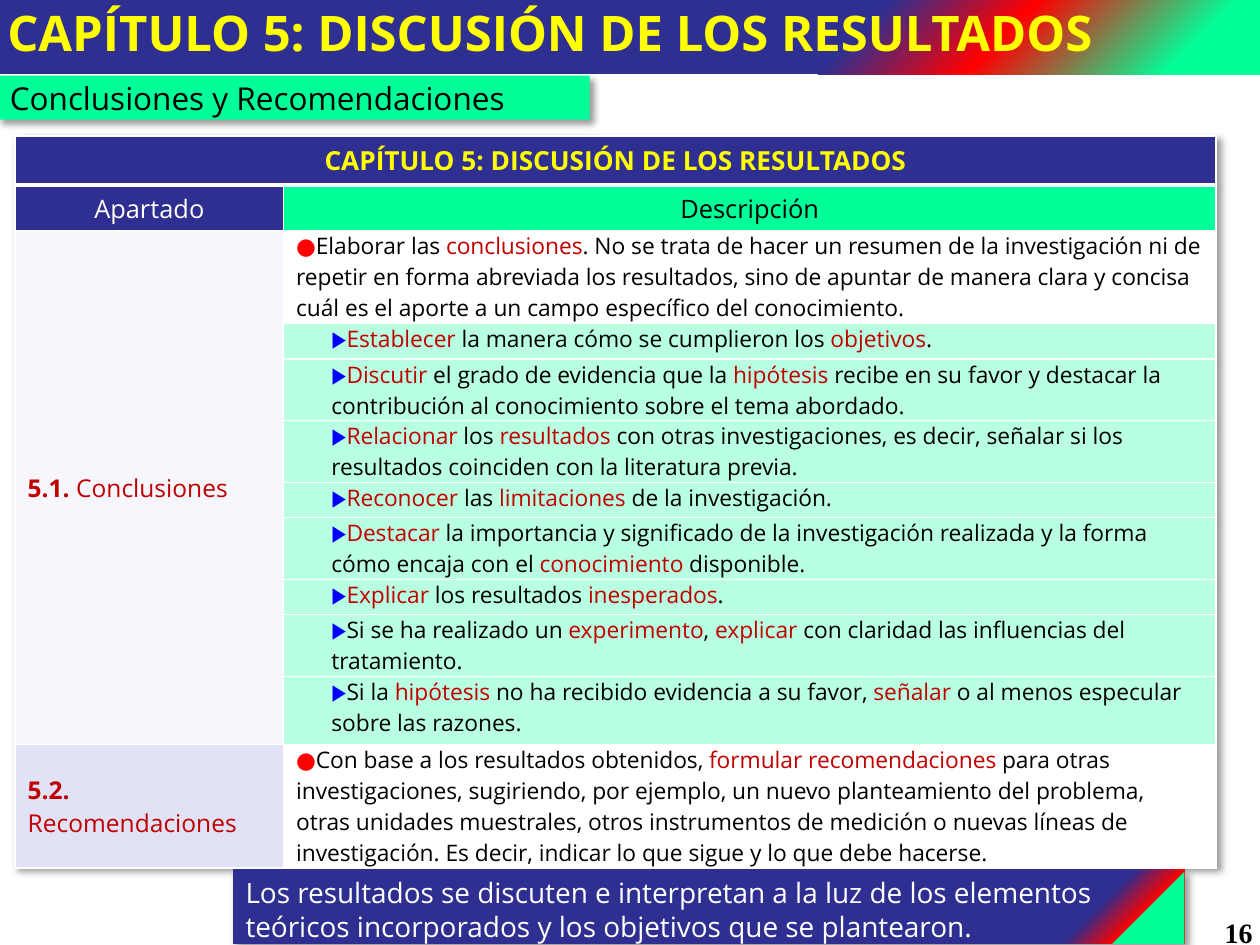
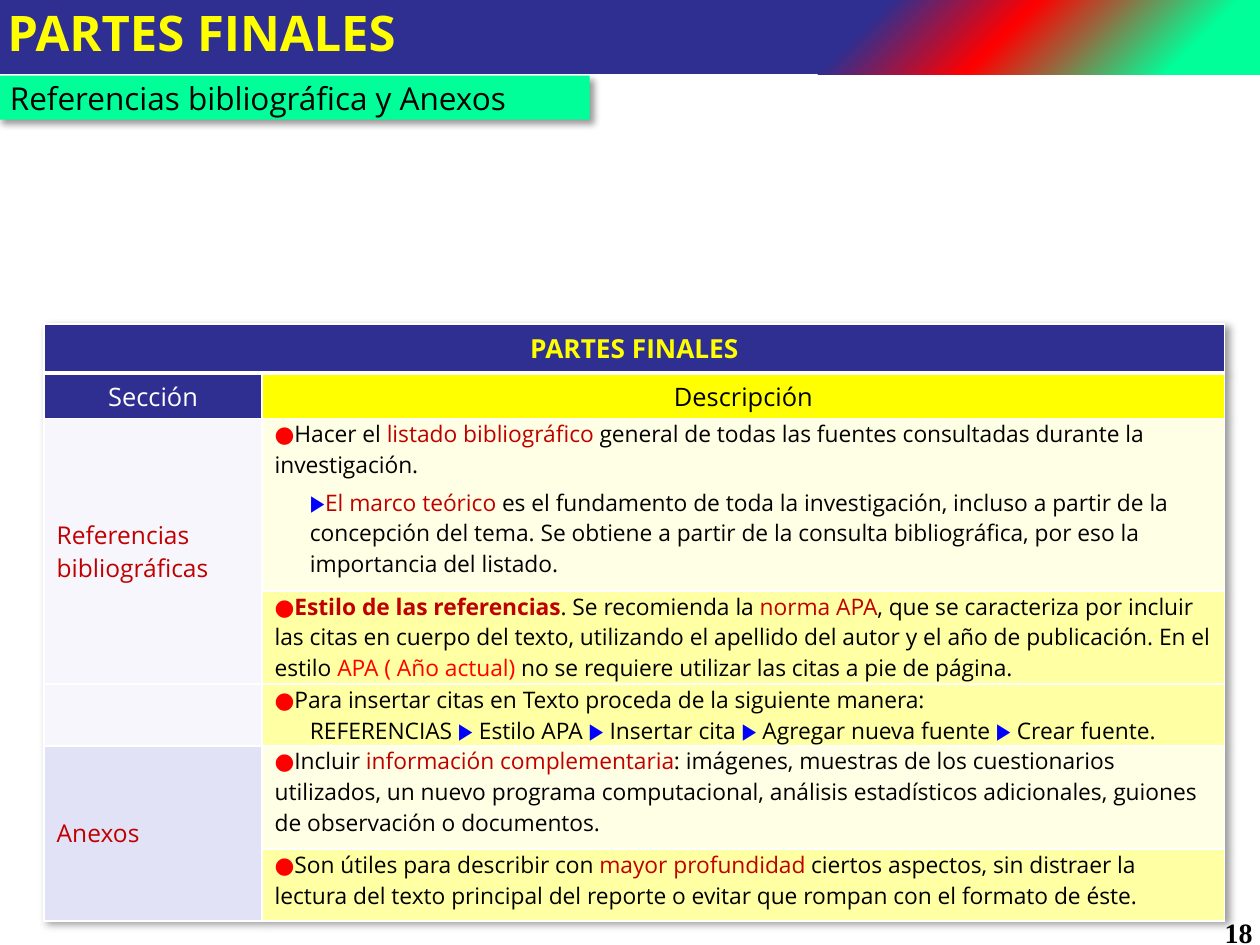
"""Build two thesis-guide slides, each with a banner, a subtitle tab and a section table."""
from lxml import etree
from pptx import Presentation
from pptx import util as u
from pptx.dml.color import RGBColor
from pptx.enum import shapes, text
from pptx.oxml import parse_xml

NS = "http://schemas.openxmlformats.org/drawingml/2006/main"
COLORS = {
    "navy": "2F2F91", "mint": "00FF99", "pale_mint": "B9FFE1", "yellow": "FFFF00",
    "cream": "FFFFE5", "lemon": "FFFFA3", "mist": "F6F6FC", "lilac": "E2E2F6",
    "accent": "C00000", "red": "FF0000", "blue": "0000FF", "white": "FFFFFF", "black": "000000",
}
BULLETS = {"●": "red", "▶": "blue"}
SHADOW = (f'<a:effectLst xmlns:a="{NS}"><a:outerShdw blurRad="50800" dist="38100" dir="2700000" '
          'algn="tl" rotWithShape="0"><a:srgbClr val="000000"><a:alpha val="40000"/></a:srgbClr>'
          '</a:outerShdw></a:effectLst>')


def split_marks(line):
    """Yield (words, color, bold) from text where |...| is accented, |*...| bold, |^...| red."""
    for order, part in enumerate(line.split("|")):
        accented = order % 2 == 1
        bold, red = accented and part.startswith("*"), accented and part.startswith("^")
        color = "red" if red else "accent" if accented else "black"
        words = part[1:] if bold or red else part
        while words:
            if words[0] in BULLETS:
                yield words[0], BULLETS[words[0]], False
                words = words[1:]
                continue
            end = min([words.find(mark) for mark in BULLETS if mark in words] or [len(words)])
            yield words[:end], color, bold
            words = words[end:]


def add_text(para, words, size=13, color="black", bold=False, font="Open Sans"):
    """Append one formatted run to a paragraph."""
    span = para.add_run()
    span.text = words
    span.font.size, span.font.bold, span.font.name = u.Pt(size), bold, font
    span.font.color.rgb = RGBColor.from_string(COLORS[color])


class Deck:
    """Presentation style and the page being drawn."""

    def __init__(self):
        """Start an empty 10 by 7.5 inch deck."""
        self.deck = Presentation()
        self.deck.slide_width, self.deck.slide_height = u.Inches(10), u.Inches(7.5)
        self.page = None

    def new_page(self, title, subtitle, number):
        """Add a page with its shared banner, subtitle tab and number."""
        self.page = self.deck.slides.add_slide(self.deck.slide_layouts[6])
        self.box((-0.04, -0.03, 10.04, 0.62), title, stops=(7, 22, 33),
                 size=28, color="yellow", bold=True)
        self.number(number)
        self.box((-0.02, 0.6, 4.7, 0.35), subtitle, fill="mint", shadow=True,
                 anchor=text.MSO_ANCHOR.MIDDLE, size=18)

    def number(self, number):
        """Write the page number in the lower right corner."""
        box = self.page.shapes.add_textbox(*map(u.Inches, (7.71, 7.22, 2.33, 0.28)))
        box.text_frame.word_wrap = True
        para = box.text_frame.paragraphs[0]
        para.alignment = text.PP_ALIGN.RIGHT
        add_text(para, str(number), size=16, bold=True, font="Times New Roman")

    def box(self, at, words, fill=None, stops=None, shadow=False,
            anchor=text.MSO_ANCHOR.TOP, **style):
        """Draw a rectangle with a solid fill or a corner gradient."""
        box = self.page.shapes.add_shape(shapes.MSO_SHAPE.RECTANGLE, *map(u.Inches, at))
        box.shadow.inherit = False
        box.line.fill.background()
        if stops:
            self.corner_gradient(box, stops)
        else:
            box.fill.solid()
            box.fill.fore_color.rgb = RGBColor.from_string(COLORS[fill])
        if shadow:
            properties = box._element.spPr
            properties.replace(properties.find(f"{{{NS}}}effectLst"), parse_xml(SHADOW))
        frame = box.text_frame
        frame.word_wrap, frame.vertical_anchor = True, anchor
        frame.paragraphs[0].alignment = text.PP_ALIGN.LEFT
        add_text(frame.paragraphs[0], words, **style)

    def corner_gradient(self, box, stops):
        """Fill a box from mint through red to navy, starting at its lower right corner."""
        marks = "".join(f'<a:gs pos="{stop * 1000}"><a:srgbClr val="{COLORS[name]}"/></a:gs>'
                        for stop, name in zip(stops, ("mint", "red", "navy")))
        gradient = parse_xml(
            f'<a:gradFill xmlns:a="{NS}" rotWithShape="1"><a:gsLst>{marks}</a:gsLst>'
            '<a:path path="circle"><a:fillToRect l="100000" t="100000"/></a:path>'
            '<a:tileRect r="-100000" b="-100000"/></a:gradFill>')
        box._element.spPr.find(f"{{{NS}}}prstGeom").addnext(gradient)

    def table(self, left, top, widths, title, headers, header_fill, sections):
        """Draw a titled table whose sections each span their own rows."""
        rows = [row for _, _, section in sections for row in section]
        heights = [0.39, 0.36] + [row[0] for row in rows]
        size = (sum(widths), sum(heights))
        frame = self.page.shapes.add_table(len(heights), 2, *map(u.Inches, (left, top, *size)))
        table = frame.table
        table.first_row = table.horz_banding = False
        table._tbl.tblPr.insert(0, parse_xml(SHADOW))
        for column, width in zip(table.columns, widths):
            column.width = u.Inches(width)
        for row, height in zip(table.rows, heights):
            row.height = u.Inches(height)

        table.cell(0, 0).merge(table.cell(0, 1))
        for column in range(2):
            self.cell(table.cell(0, column), "navy", bottom=3)
        self.heading(table.cell(0, 0), title, 15, "yellow", True)
        for column, (fill, color) in enumerate((("navy", "white"), (header_fill, "black"))):
            self.cell(table.cell(1, column), fill)
            self.heading(table.cell(1, column), headers[column], 14.5, color)

        first = 2
        for label, label_fill, section in sections:
            for index, (_, fill, words) in enumerate(section, first):
                self.cell(table.cell(index, 0), label_fill)
                self.cell(table.cell(index, 1), fill)
                self.body(table.cell(index, 1), words)
            if len(section) > 1:
                table.cell(first, 0).merge(table.cell(first + len(section) - 1, 0))
            for words, color, bold in split_marks(label):
                add_text(table.cell(first, 0).text_frame.paragraphs[0], words, 14, color, bold)
            first += len(section)

    def cell(self, cell, fill, bottom=1):
        """Fill a cell, centre it vertically and give it white borders."""
        cell.vertical_anchor = text.MSO_ANCHOR.MIDDLE
        cell.fill.solid()
        cell.fill.fore_color.rgb = RGBColor.from_string(COLORS[fill])
        properties = cell._tc.get_or_add_tcPr()
        for order, (side, width) in enumerate(zip("LRTB", (1, 1, 1, bottom))):
            line = etree.Element(f"{{{NS}}}ln{side}", w=str(u.Pt(width)))
            solid = etree.SubElement(line, f"{{{NS}}}solidFill")
            etree.SubElement(solid, f"{{{NS}}}srgbClr", val=COLORS["white"])
            properties.insert(order, line)

    def heading(self, cell, words, size, color, bold=False):
        """Write a centred heading in a cell."""
        para = cell.text_frame.paragraphs[0]
        para.alignment = text.PP_ALIGN.CENTER
        add_text(para, words, size, color, bold)

    def body(self, cell, words):
        """Write description lines; a leading > indents a line."""
        cell.vertical_anchor = text.MSO_ANCHOR.TOP
        cell.margin_top = cell.margin_bottom = 0
        for index, line in enumerate(words.split("\n")):
            frame = cell.text_frame
            para = frame.add_paragraph() if index else frame.paragraphs[0]
            if line.startswith(">"):
                line = line[1:]
                para._p.get_or_add_pPr().set("marL", str(u.Inches(0.28)))
            if index and line.startswith("▶"):
                para.space_before = u.Pt(4)
            for part, color, bold in split_marks(line):
                add_text(para, part, color=color, bold=bold)


CONCLUSION_STEPS = [
    (0.28, "|Establecer| la manera cómo se cumplieron los |objetivos|."),
    (0.49, "|Discutir |el grado de evidencia que la |hipótesis |recibe en su favor y destacar la "
           "contribución al conocimiento sobre el tema abordado."),
    (0.49, "|Relacionar| los |resultados| con otras investigaciones, es decir, señalar si los "
           "resultados coinciden con la literatura previa."),
    (0.28, "|Reconocer| las |limitaciones |de la investigación."),
    (0.49, "|Destacar| la importancia y significado de la investigación realizada y la forma "
           "cómo encaja con el |conocimiento |disponible."),
    (0.28, "|Explicar| los resultados |inesperados|."),
    (0.49, "Si se ha realizado un |experimento|, |explicar |con claridad las influencias del "
           "tratamiento."),
    (0.54, "Si la |hipótesis |no ha recibido evidencia a su favor, |señalar| o al menos "
           "especular sobre las razones."),
]
CHAPTER_SECTIONS = [
    ("|*5.1. ||Conclusiones|", "mist", [
        (0.74, "white", "●Elaborar las |conclusiones|. No se trata de hacer un resumen de la "
         "investigación ni de repetir en forma abreviada los resultados, sino de apuntar de "
         "manera clara y concisa cuál es el aporte a un campo específico del conocimiento."),
        *[(height, "pale_mint", ">▶" + step) for height, step in CONCLUSION_STEPS]]),
    ("|*5.2. ||Recomendaciones|", "lilac", [
        (0.98, "white", "●Con base a los resultados obtenidos, |formular recomendaciones |para "
         "otras investigaciones, sugiriendo, por ejemplo, un nuevo planteamiento del problema, "
         "otras unidades muestrales, otros instrumentos de medición o nuevas líneas de "
         "investigación. Es decir, indicar lo que sigue y lo que debe hacerse.")]),
]
FINAL_SECTIONS = [
    ("|Referencias bibliográficas|", "mist", [
        (1.37, "cream", "●Hacer el |listado bibliográfico |general de todas las fuentes "
         "consultadas durante la investigación.\n>▶|El marco teórico |es el fundamento de toda "
         "la investigación, incluso a partir de la concepción del tema. Se obtiene a partir de "
         "la consulta bibliográfica, por eso la importancia del listado."),
        (0.74, "lemon", "●|*Estilo de las referencias|. Se recomienda la |norma APA|, que se "
         "caracteriza por incluir las citas en cuerpo del texto, utilizando el apellido del "
         "autor y el año de publicación. En el estilo |^APA ( Año actual) |no se requiere "
         "utilizar las citas a pie de página.")]),
    ("", "mist", [
        (0.49, "lemon", "●Para insertar citas en Texto proceda de la siguiente manera:\n"
         ">REFERENCIAS ▶ Estilo APA ▶ Insertar cita ▶ Agregar nueva fuente ▶ Crear fuente.")]),
    ("|Anexos|", "lilac", [
        (0.82, "cream", "●Incluir |información complementaria|: imágenes, muestras de los "
         "cuestionarios utilizados, un nuevo programa computacional, análisis estadísticos "
         "adicionales, guiones de observación o documentos."),
        (0.57, "lemon", "●Son útiles para describir con |mayor profundidad |ciertos aspectos, "
         "sin distraer la lectura del texto principal del reporte o evitar que rompan con el "
         "formato de éste.")]),
]


def main():
    """Draw both pages and save the deck."""
    deck = Deck()
    chapter = "CAPÍTULO 5: DISCUSIÓN DE LOS RESULTADOS"
    deck.new_page(chapter, "Conclusiones y Recomendaciones", 16)
    deck.table(0.12, 1.08, (2.13, 7.4), chapter, ("Apartado", "Descripción"), "mint",
               CHAPTER_SECTIONS)
    deck.box((1.85, 6.9, 7.55, 0.59),
             "Los resultados se discuten e interpretan a la luz de los elementos teóricos "
             "incorporados y los objetivos que se plantearon.",
             stops=(7, 7, 12), shadow=True, size=16, color="white")

    final = "PARTES FINALES"
    deck.new_page(final, "Referencias bibliográfica y Anexos", 18)
    deck.table(0.35, 2.57, (1.73, 7.64), final, ("Sección", "Descripción"), "yellow",
               FINAL_SECTIONS)
    deck.deck.save("out.pptx")


if __name__ == "__main__":
    main()
